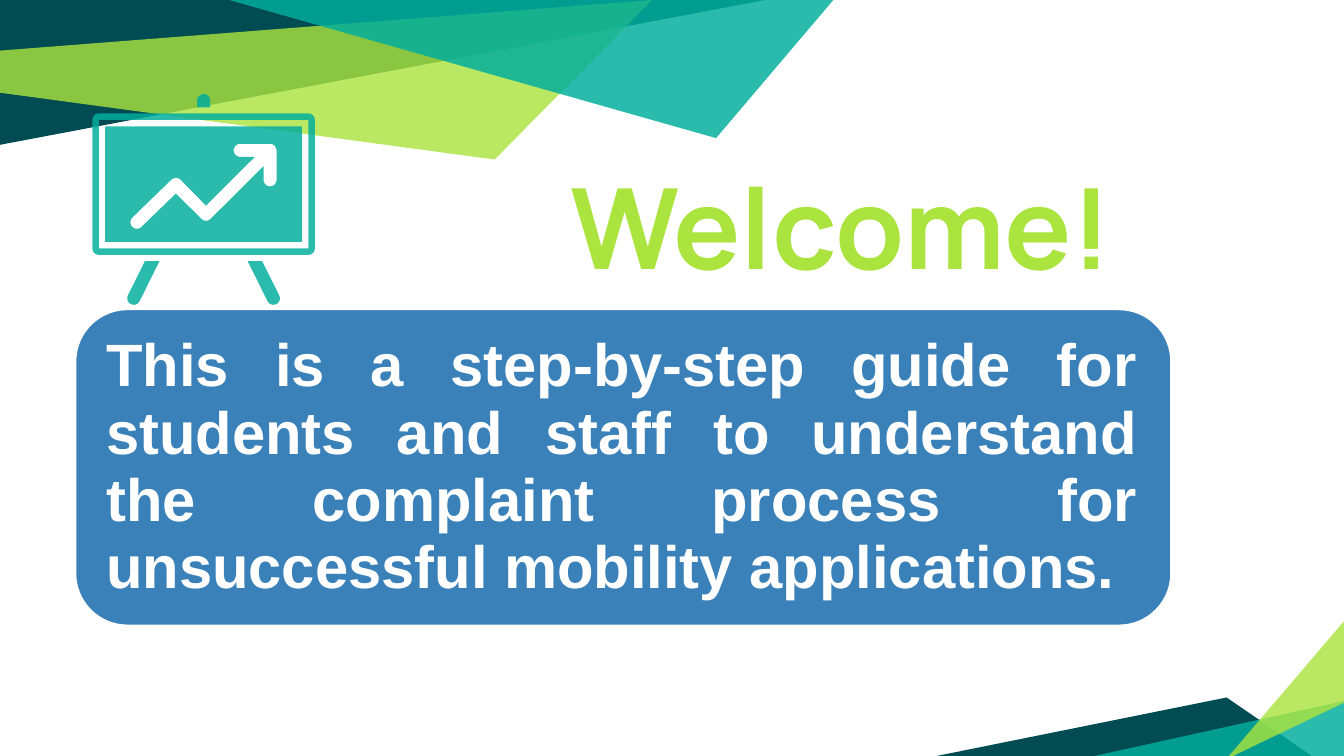
from dataclasses import dataclass
from math import cos, radians, sin

from lxml.etree import SubElement
from pptx import Presentation
from pptx.dml.color import RGBColor
from pptx.enum.shapes import MSO_SHAPE
from pptx.enum.text import MSO_ANCHOR, PP_ALIGN
from pptx.oxml.ns import qn
from pptx.util import Pt

PETROL = RGBColor(0x00, 0x4C, 0x52)
LIME = RGBColor(0xAB, 0xE3, 0x3F)
TEAL = RGBColor(0x00, 0xAE, 0x9D)
BLUE = RGBColor(0x3A, 0x81, 0xBA)
WHITE = RGBColor(0xFF, 0xFF, 0xFF)

Contour = list[tuple[float, float]]


@dataclass
class Polygon:
    contours: list[Contour]
    color: RGBColor
    opacity: int = 100


@dataclass
class TextBlock:
    text: str
    left: float
    top: float
    width: float
    height: float
    inset: float
    font: str
    size: float
    color: RGBColor
    anchor: MSO_ANCHOR
    align: PP_ALIGN
    spacing: float = 1.0


def arc(cx: float, cy: float, r: float, start: int, end: int) -> Contour:
    return [(cx + r * cos(radians(a)), cy + r * sin(radians(a)))
            for a in range(start, end - 1, -15)]


def rectangle(left: float, top: float, right: float, bottom: float) -> Contour:
    return [(left, top), (left, bottom), (right, bottom), (right, top)]


def rounded_rectangle(left: float, top: float, right: float, bottom: float,
                      r: float) -> Contour:
    centers = [(right - r, bottom - r), (right - r, top + r),
               (left + r, top + r), (left + r, bottom - r)]
    return [point for i, (x, y) in enumerate(centers)
            for point in arc(x, y, r, 90 - 90 * i, -90 * i)]


def add_polygon(shapes, polygon: Polygon) -> None:
    first, *others = [[(Pt(x), Pt(y)) for x, y in c] for c in polygon.contours]
    builder = shapes.build_freeform(*first[0], scale=1.0)
    builder.add_line_segments(first[1:], close=True)
    for contour in others:
        builder.move_to(*contour[0])
        builder.add_line_segments(contour[1:], close=True)
    s = builder.convert_to_shape()
    s.shadow.inherit = False
    s.line.fill.background()
    s.fill.solid()
    s.fill.fore_color.rgb = polygon.color
    if polygon.opacity < 100:
        color = s._element.spPr.find(qn("a:solidFill")).find(qn("a:srgbClr"))
        SubElement(color, qn("a:alpha"), val=str(polygon.opacity * 1000))


def add_panel(shapes, left: float, top: float, width: float, height: float) -> None:
    s = shapes.add_shape(MSO_SHAPE.ROUNDED_RECTANGLE, Pt(left), Pt(top),
                         Pt(width), Pt(height))
    s.shadow.inherit = False
    s.fill.solid()
    s.fill.fore_color.rgb = BLUE
    s.line.color.rgb = WHITE
    s.line.width = Pt(2)


def add_text(shapes, block: TextBlock) -> None:
    s = shapes.add_textbox(Pt(block.left), Pt(block.top),
                           Pt(block.width), Pt(block.height))
    tf = s.text_frame
    tf.word_wrap = True
    tf.vertical_anchor = block.anchor
    tf.margin_left = tf.margin_right = Pt(block.inset)
    tf.margin_top = tf.margin_bottom = Pt(block.inset)
    p = tf.paragraphs[0]
    p.text = block.text
    p.alignment = block.align
    p.line_spacing = block.spacing
    p.font.name = block.font
    p.font.size = Pt(block.size)
    p.font.bold = True
    p.font.color.rgb = block.color


BACKDROP = [
    Polygon([[(0, 0), (0, 77.6), (410, 0)]], PETROL),
    Polygon([[(-0.7, 27.2), (0, 49.7), (265, 85.5), (349.5, 0)]], LIME, 81),
    Polygon([[(502, 405), (702.7, 405), (657.2, 373.7)]], PETROL),
    Polygon([[(721.4, 375.2), (721.4, 406.8), (578.2, 406.8)]], TEAL, 83),
    Polygon([[(721.4, 375.8), (721.4, 331.2), (656.8, 406.8)]], LIME, 81),
    Polygon([[(122.7, 0), (383.6, 74), (447, -0.7), (438.5, 0)]], TEAL, 83),
]

MIDDLE = 109.1
STROKE = 3.5

frame = [rounded_rectangle(49.5, 60.8, 168.7, 136.6, STROKE),
         rectangle(53, 64.3, 165.2, 133.1)]
knob = [(MIDDLE + STROKE, 57.6)] + arc(MIDDLE, 53.9, STROKE, 0, -180) + [
    (MIDDLE - STROKE, 57.6)]
left_leg = [(85.5, 139.9), (77.7, 139.9)] + arc(71.7, 159.8, STROKE, 205, 25)
right_leg = [(2 * MIDDLE - x, y) for x, y in left_leg]
arrow = (arc(128.7, 80.6, STROKE, 270, 90) + [(136.6, 84.1), (110.4, 110.2)]
         + arc(94.3, 98.8, STROKE, 315, 225)
         + arc(73.4, 119.1, STROKE, 225, 45) + [(94.3, 103.7)]
         + arc(110.4, 114.8, STROKE, 135, 45) + [(141.2, 89.1)]
         + arc(144.7, 96.4, STROKE, 180, 0)
         + arc(144.7, 80.6, STROKE, 0, -90))
board = [arrow, rectangle(56.3, 67.7, 161.8, 129.6)]

ICON = [Polygon(contours, TEAL, 83)
        for contours in (frame, [knob], [left_leg], [right_leg], board)]

TITLE = TextBlock("Welcome!", 298.8, 72, 421.2, 91.4, 7.2, "Manrope", 60, LIME,
                  MSO_ANCHOR.BOTTOM, PP_ALIGN.LEFT)
MESSAGE = TextBlock(
    "This is a step-by-step guide for students and staff to understand "
    "the complaint process for unsuccessful mobility applications.",
    47.5, 173.5, 571.7, 154.1, 9.4, "Arial", 32, WHITE,
    MSO_ANCHOR.MIDDLE, PP_ALIGN.JUSTIFY, 0.94)


def main() -> None:
    prs = Presentation()
    prs.slide_width, prs.slide_height = Pt(720), Pt(405)
    shapes = prs.slides.add_slide(prs.slide_layouts[6]).shapes
    for polygon in BACKDROP:
        add_polygon(shapes, polygon)
    add_text(shapes, TITLE)
    add_panel(shapes, 39.9, 165.2, 588, 170.4)
    add_text(shapes, MESSAGE)
    for polygon in ICON:
        add_polygon(shapes, polygon)
    prs.save("out.pptx")


if __name__ == "__main__":
    main()
